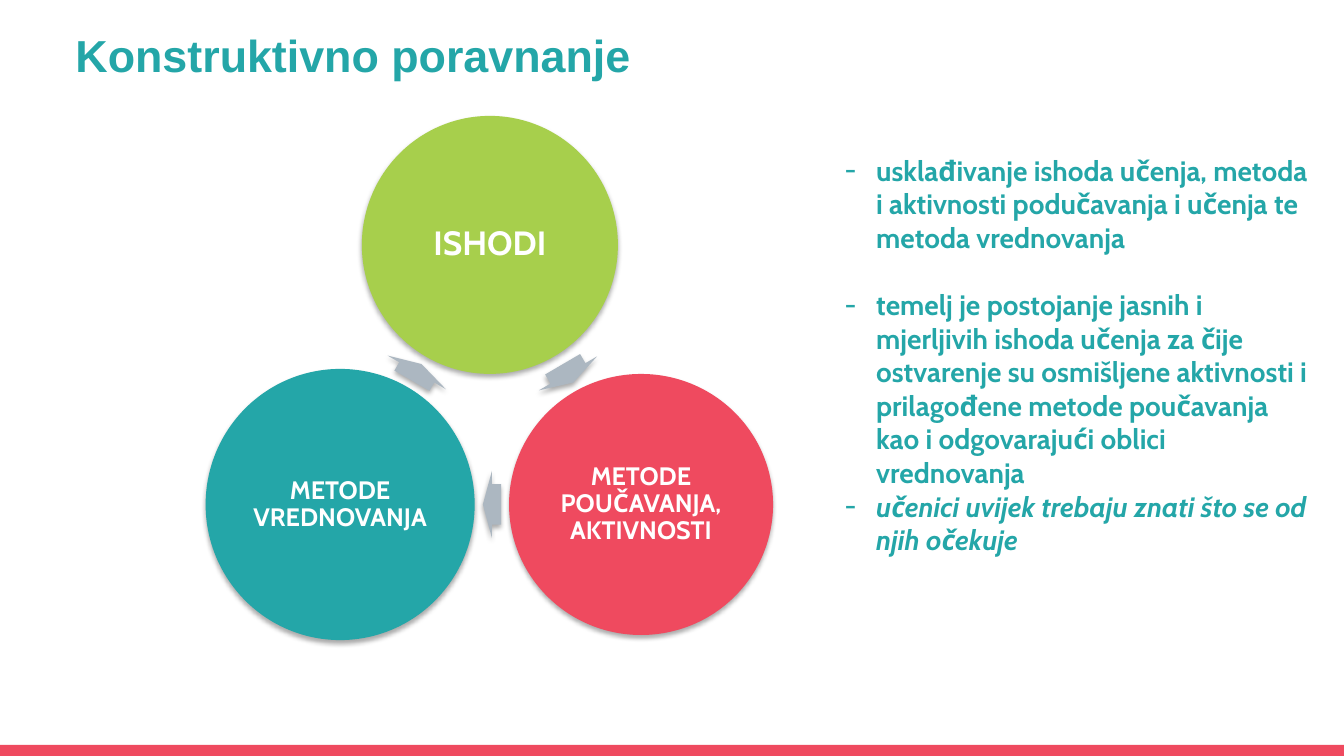
from dataclasses import dataclass

from lxml.etree import SubElement
from pptx import Presentation
from pptx.dml.color import RGBColor
from pptx.enum.shapes import MSO_SHAPE
from pptx.enum.text import MSO_ANCHOR, PP_ALIGN
from pptx.oxml.ns import qn
from pptx.util import Pt


@dataclass(frozen=True)
class Theme:
    teal: str = "24A6A8"
    green: str = "A7CF4C"
    red: str = "EF4A5F"
    gray: str = "ACB7C1"
    white: str = "FFFFFF"
    head: str = "Arial"
    body: str = "Cabin"
    title: int = 32
    large: int = 24
    list: int = 20
    small: int = 18


THEME = Theme()

# Label, fill, type size, left, top, width, height
DISCS = [
    ("ISHODI", THEME.green, THEME.large, 258.5, 82.8, 182.9, 184.3),
    ("METODE POUČAVANJA, AKTIVNOSTI", THEME.red, THEME.small,
     363.6, 267.1, 188.6, 186.5),
    ("METODE VREDNOVANJA", THEME.teal, THEME.small,
     146.9, 263.5, 192.2, 193.7),
]

# Centre x, centre y, length, turn
ARROWS = [
    (405.7, 266.7, 15.1, 59.7),
    (351.4, 360.3, 13, 180),
    (297.7, 266, 13.7, 300),
]
SPAN = 48.2

# Text, space before, italic
POINTS = [
    ("usklađivanje ishoda učenja, metoda i aktivnosti podučavanja i učenja te "
     "metoda vrednovanja", 0, False),
    ("temelj je postojanje jasnih i mjerljivih ishoda učenja za čije "
     "ostvarenje su osmišljene aktivnosti i prilagođene metode poučavanja "
     "kao i odgovarajući oblici vrednovanja", 24, False),
    ("učenici uvijek trebaju znati što se od njih očekuje", 0, True),
]


def style(para, size, color, face, italic=None):
    for run in para.runs:
        font = run.font
        font.name, font.size = face, Pt(size)
        font.bold, font.italic = True, italic
        font.color.rgb = RGBColor.from_string(color)


def add_form(slide, kind, fill, left, top, width, height):
    form = slide.shapes.add_shape(
        kind, Pt(left), Pt(top), Pt(width), Pt(height))
    form.shadow.inherit = False
    form.fill.solid()
    form.fill.fore_color.rgb = RGBColor.from_string(fill)
    form.line.fill.background()
    return form


def add_shade(form):
    effects = form._element.spPr.find(qn("a:effectLst"))
    shade = SubElement(effects, qn("a:outerShdw"), blurRad=str(Pt(3.5)),
                       dist=str(Pt(2.2)), dir="5400000", rotWithShape="0")
    color = SubElement(shade, qn("a:srgbClr"), val="000000")
    SubElement(color, qn("a:alpha"), val="32000")


def add_disc(slide, label, fill, size, *place):
    disc = add_form(slide, MSO_SHAPE.OVAL, fill, *place)
    add_shade(disc)
    frame = disc.text_frame
    frame.text = label
    frame.word_wrap = True
    frame.vertical_anchor = MSO_ANCHOR.MIDDLE
    frame.margin_left = frame.margin_right = Pt(2)
    frame.margin_top = frame.margin_bottom = Pt(2)
    para = frame.paragraphs[0]
    para.alignment = PP_ALIGN.CENTER
    para.line_spacing = 0.9
    style(para, size, THEME.white, THEME.body)


def add_arrow(slide, mid_x, mid_y, length, turn):
    arrow = add_form(slide, MSO_SHAPE.RIGHT_ARROW, THEME.gray,
                     mid_x - length / 2, mid_y - SPAN / 2, length, SPAN)
    arrow.adjustments[0] = 0.6
    arrow.adjustments[1] = 0.5
    arrow.rotation = turn
    add_shade(arrow)


def add_box(slide, left, top, width, height):
    box = slide.shapes.add_textbox(Pt(left), Pt(top), Pt(width), Pt(height))
    box.text_frame.word_wrap = True
    return box.text_frame


def add_title(slide, text):
    frame = add_box(slide, 46.8, 15.1, 442, 53.3)
    frame.text = text
    frame.vertical_anchor = MSO_ANCHOR.MIDDLE
    para = frame.paragraphs[0]
    para.line_spacing = 0.9
    style(para, THEME.title, THEME.teal, THEME.head)


def add_list(slide, points):
    frame = add_box(slide, 596.2, 105.8, 347, 298)
    frame.text = "\n".join(text for text, _, _ in points)
    for para, (_, gap, italic) in zip(frame.paragraphs, points):
        if gap:
            para.space_before = Pt(gap)
        props = para._p.get_or_add_pPr()
        props.set("marL", str(Pt(22.5)))
        props.set("indent", str(Pt(-22.5)))
        SubElement(props, qn("a:buFont"), typeface=THEME.body)
        SubElement(props, qn("a:buChar"), char="-")
        style(para, THEME.list, THEME.teal, THEME.body, italic)


def main():
    deck = Presentation()
    deck.slide_width, deck.slide_height = Pt(960), Pt(540)
    slide = deck.slides.add_slide(deck.slide_layouts[6])

    # Footer bar and title
    add_form(slide, MSO_SHAPE.RECTANGLE, THEME.red, 0, 532, 960, 8)
    add_title(slide, "Konstruktivno poravnanje")

    # Cycle of three discs
    for disc, arrow in zip(DISCS, ARROWS):
        add_disc(slide, *disc)
        add_arrow(slide, *arrow)

    # Explanation
    add_list(slide, POINTS)
    deck.save("out.pptx")


if __name__ == "__main__":
    main()
